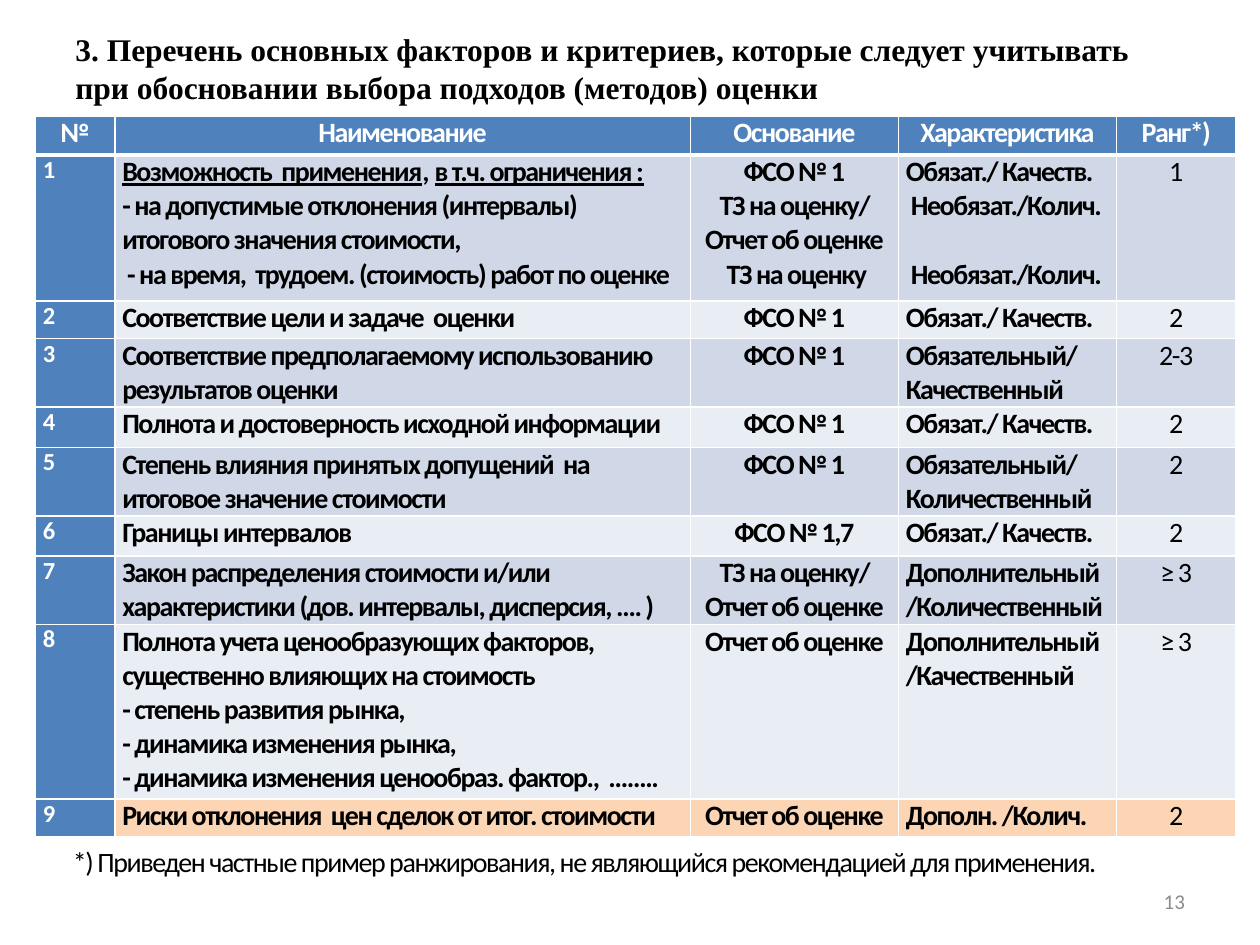
from pptx import Presentation
from pptx.dml.color import RGBColor
from pptx.enum.text import MSO_ANCHOR as Anchor, PP_ALIGN as Align
from pptx.oxml import parse_xml
from pptx.oxml.ns import nsdecls
from pptx.util import Pt

BLACK = RGBColor(0x00, 0x00, 0x00)
WHITE = RGBColor(0xFF, 0xFF, 0xFF)
GRAY = RGBColor(0x8C, 0x8C, 0x8C)
BLUE = RGBColor(0x4F, 0x81, 0xBD)
BAND_DARK = RGBColor(0xD0, 0xD8, 0xE8)
BAND_LIGHT = RGBColor(0xE9, 0xED, 0xF4)
PEACH = RGBColor(0xFC, 0xD5, 0xB5)

COLUMN_WIDTHS = [45.4, 329, 118.8, 124.6, 68.4]
COLUMN_ALIGNS = [Align.LEFT, Align.LEFT, Align.CENTER, Align.LEFT, Align.CENTER]
TABLE_LEFT = 20.2

# Line breaks separate paragraphs, underscores enclose underlined words
HEADER = ["№", "Наименование", "Основание", "Характеристика", "Ранг*)"]
FACTORS = [
    ["1", "_Возможность  применения_, _в т.ч. ограничения :_\n"
          "- на допустимые отклонения (интервалы) итогового значения стоимости,\n"
          " - на время,  трудоем. (стоимость) работ по оценке",
     "ФСО № 1\nТЗ на оценку/ Отчет об оценке\n ТЗ на оценку",
     "Обязат./ Качеств.\n Необязат./Колич.\n Необязат./Колич.", "1"],
    ["2", "Соответствие цели и задаче  оценки", "ФСО № 1", "Обязат./ Качеств.", "2"],
    ["3", "Соответствие предполагаемому использованию результатов оценки",
     "ФСО № 1", "Обязательный/ Качественный", "2-3"],
    ["4", "Полнота и достоверность исходной информации",
     "ФСО № 1", "Обязат./ Качеств.", "2"],
    ["5", "Степень влияния принятых допущений  на итоговое значение стоимости",
     "ФСО № 1", "Обязательный/ Количественный", "2"],
    ["6", "Границы интервалов", "ФСО № 1,7", "Обязат./ Качеств.", "2"],
    ["7", "Закон распределения стоимости и/или характеристики "
          "(дов. интервалы, дисперсия, …. )",
     "ТЗ на оценку/ Отчет об оценке", "Дополнительный/Количественный", "≥ 3"],
    ["8", "Полнота учета ценообразующих факторов, существенно влияющих на стоимость\n"
          "- степень развития рынка,\n- динамика изменения рынка,\n"
          "- динамика изменения ценообраз. фактор.,  ……..",
     "Отчет об оценке", "Дополнительный/Качественный", "≥ 3"],
]
RISKS = ["9", "Риски отклонения  цен сделок от итог. стоимости",
         "Отчет об оценке", "Дополн. /Колич.", "2"]
FACTOR_HEIGHTS = [22.3, 83.5, 21.6, 39.1, 23, 39.1, 23, 39.1, 100]


def write(frame, text, size, color, bold=False, align=Align.LEFT,
          name="Calibri", spacing=-80):
    for index, line in enumerate(text.split("\n")):
        para = frame.add_paragraph() if index else frame.paragraphs[0]
        para.alignment = align
        font = para.font
        font.name, font.size, font.bold = name, Pt(size), bold
        font.color.rgb = color
        for part, words in enumerate(line.split("_")):
            if words:
                span = para.add_run()
                span.text = words
                if part % 2:
                    span.font.underline = True
                span._r.get_or_add_rPr().set("spc", str(spacing))


def add_text(left, top, width, height, anchor, *args, **style):
    box = slide.shapes.add_textbox(Pt(left), Pt(top), Pt(width), Pt(height))
    frame = box.text_frame
    frame.word_wrap = True
    frame.vertical_anchor = anchor
    write(frame, *args, **style)


deck = Presentation()
deck.slide_width, deck.slide_height = Pt(720), Pt(540)
slide = deck.slides.add_slide(deck.slide_layouts[6])

# Title
add_text(36, 17.3, 648, 43.2, Anchor.MIDDLE,
         "3. Перечень основных факторов и критериев, которые следует учитывать "
         "при обосновании выбора подходов (методов) оценки",
         18, BLACK, bold=True, name="Times New Roman", spacing=0)

# Factor table, and the risk row as a table of its own
for top, rows, heights, bands in [
    (66.2, [HEADER] + FACTORS, FACTOR_HEIGHTS, [BAND_LIGHT, BAND_DARK]),
    (456.5, [RISKS], [21.6], [PEACH]),
]:
    table = slide.shapes.add_table(
        len(rows), len(HEADER), Pt(TABLE_LEFT), Pt(top),
        Pt(sum(COLUMN_WIDTHS)), Pt(sum(heights))).table
    table.first_row = rows[0] is HEADER
    table.horz_banding = False
    for column, width in zip(table.columns, COLUMN_WIDTHS):
        column.width = Pt(width)
    for r, (texts, height) in enumerate(zip(rows, heights)):
        table.rows[r].height = Pt(height)
        is_header = texts is HEADER
        for c, text in enumerate(texts):
            cell = table.cell(r, c)
            cell.margin_left = cell.margin_right = Pt(4.3)
            cell.margin_top = cell.margin_bottom = 0

            # White borders, thicker under the header
            after_header = r == 1 and rows[0] is HEADER
            for side in "LRTB":
                thick = (is_header and side == "B") or (after_header and side == "T")
                cell._tc.get_or_add_tcPr().append(parse_xml(
                    f'<a:ln{side} {nsdecls("a")} w="{Pt(3 if thick else 1)}">'
                    f'<a:solidFill><a:srgbClr val="{WHITE}"/></a:solidFill>'
                    f'</a:ln{side}>'))

            on_blue = is_header or c == 0
            cell.fill.solid()
            cell.fill.fore_color.rgb = BLUE if on_blue else bands[r % len(bands)]
            write(cell.text_frame, text,
                  14 if c == 0 and not is_header else 16,
                  WHITE if on_blue else BLACK,
                  bold=is_header or c < 4,
                  align=Align.CENTER if is_header else COLUMN_ALIGNS[c])
    if rows[0] is HEADER:
        # Level the last characteristic with its factor line
        table.cell(1, 3).text_frame.paragraphs[2].space_before = Pt(19.5)

# Footnote and page number
add_text(34.6, 478.8, 671, 26.6, Anchor.TOP,
         "*) Приведен частные пример ранжирования, не являющийся "
         "рекомендацией для применения.", 16, BLACK)
add_text(516.2, 500.4, 168, 28.8, Anchor.MIDDLE, "13", 12, GRAY,
         align=Align.RIGHT, spacing=0)

deck.save("out.pptx")
